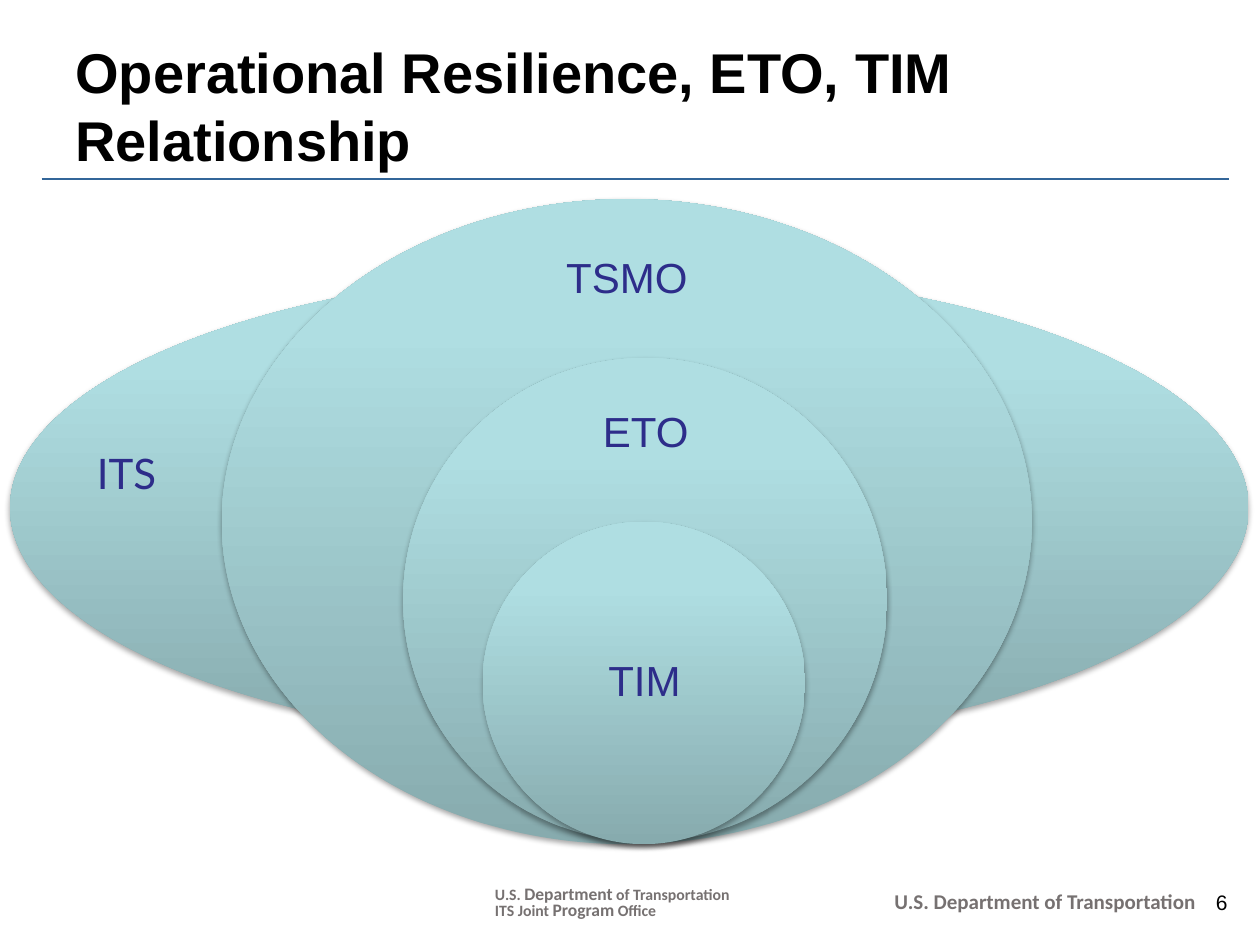
"""Builds the slide on how operational resilience, ETO and TIM relate."""
from lxml.etree import SubElement
from pptx import Presentation
from pptx.dml.color import RGBColor
from pptx.enum.shapes import MSO_CONNECTOR, MSO_SHAPE
from pptx.enum.text import MSO_ANCHOR as ANCHOR, PP_ALIGN as ALIGN
from pptx.oxml import parse_xml
from pptx.oxml.ns import nsdecls, qn
from pptx.util import Pt

SCALE = 9144
COLORS = {"black": "000000", "rule": "336699", "grey": "767171", "label": "2D2D8A"}
STOPS = ((0, "87ABAE"), (80, "AFDEE2"), (100, "AFE0E4"))


def emu(*lengths):
    return [n * SCALE for n in lengths]


def rgb(name):
    return RGBColor.from_string(COLORS[name])


class Deck:
    def __init__(self, width, height):
        self.prs = Presentation()
        self.prs.slide_width, self.prs.slide_height = emu(width, height)
        self.s = self.prs.slides.add_slide(self.prs.slide_layouts[6])

    def rule(self, x1, y1, x2, y2):
        line = self.s.shapes.add_connector(MSO_CONNECTOR.STRAIGHT, *emu(x1, y1, x2, y2))
        line.line.color.rgb = rgb("rule")
        line.line.width = Pt(1.5)
        SubElement(line._element.spPr, qn("a:effectLst"))

    def ellipse(self, *box):
        sp = self.s.shapes.add_shape(MSO_SHAPE.OVAL, *emu(*box))
        sp.line.fill.background()
        stops = "".join(
            f'<a:gs pos="{pos * 1000}"><a:srgbClr val="{color}"/></a:gs>' for pos, color in STOPS)
        sp._element.spPr.find(qn("a:ln")).addprevious(parse_xml(
            f'<a:gradFill {nsdecls("a")} rotWithShape="1"><a:gsLst>{stops}</a:gsLst>'
            '<a:lin ang="16200000" scaled="0"/></a:gradFill>'))
        sp._element.spPr.append(parse_xml(
            f'<a:effectLst {nsdecls("a")}><a:outerShdw blurRad="40000" dist="23000" dir="5400000"'
            ' rotWithShape="0"><a:srgbClr val="000000"><a:alpha val="35000"/></a:srgbClr>'
            '</a:outerShdw></a:effectLst>'))

    def text(self, box, lines, size, color, font="Arial", bold=False, align=ALIGN.LEFT,
             anchor=ANCHOR.TOP, spacing=None, inset=None, wrap=True):
        tf = self.s.shapes.add_textbox(*emu(*box)).text_frame
        tf.word_wrap = wrap
        tf.vertical_anchor = anchor
        if inset is not None:
            tf.margin_left = tf.margin_right = tf.margin_top = tf.margin_bottom = inset * SCALE
        for i, runs in enumerate(lines):
            p = tf.add_paragraph() if i else tf.paragraphs[0]
            p.alignment = align
            p.line_spacing = spacing
            p.font.name, p.font.bold = font, bold
            p.font.size, p.font.color.rgb = Pt(size), rgb(color)
            for run in runs:
                r = p.add_run()
                if isinstance(run, tuple):
                    r.text, r.font.size = run[0], Pt(run[1])
                else:
                    r.text = run

    def label(self, box, name):
        self.text(box, [[name]], 24, "label", align=ALIGN.CENTER, anchor=ANCHOR.MIDDLE,
                  spacing=0.9, inset=19)

    def footer(self, box, lines, size):
        self.text(box, lines, size, "grey", font="Calibri", bold=True, spacing=Pt(9))


def main():
    deck = Deck(1000, 750)
    deck.rule(33, 142, 975, 142)
    deck.text((942, 701, 42, 30), [["6"]], 12, "black", align=ALIGN.RIGHT)
    deck.footer((700, 708, 275, 24), [["U.S. Department of Transportation"]], 12)
    deck.footer((383, 700, 207, 36), [
        ["U.S. ", ("Department", 10), " of Transportation"],
        ["ITS Joint ", ("Program", 10), " Office"],
    ], 9)
    deck.text((50, 42, 900, 83), [["Operational Resilience, ETO, TIM Relationship"]], 32, "black",
              bold=True, anchor=ANCHOR.MIDDLE)

    deck.ellipse(8, 214, 983, 378)
    for oval, box, name in (
        ((176, 158, 643, 512), (385, 184, 225, 77), "TSMO"),
        ((320, 284, 384, 384), (423, 308, 179, 72), "ETO"),
        ((383, 414, 256, 256), (421, 478, 181, 128), "TIM"),
    ):
        deck.ellipse(*oval)
        deck.label(box, name)
    deck.text((67, 350, 71, 50), [["ITS"]], 24, "label", font="Lato", wrap=False)
    deck.prs.save("out.pptx")


if __name__ == "__main__":
    main()
